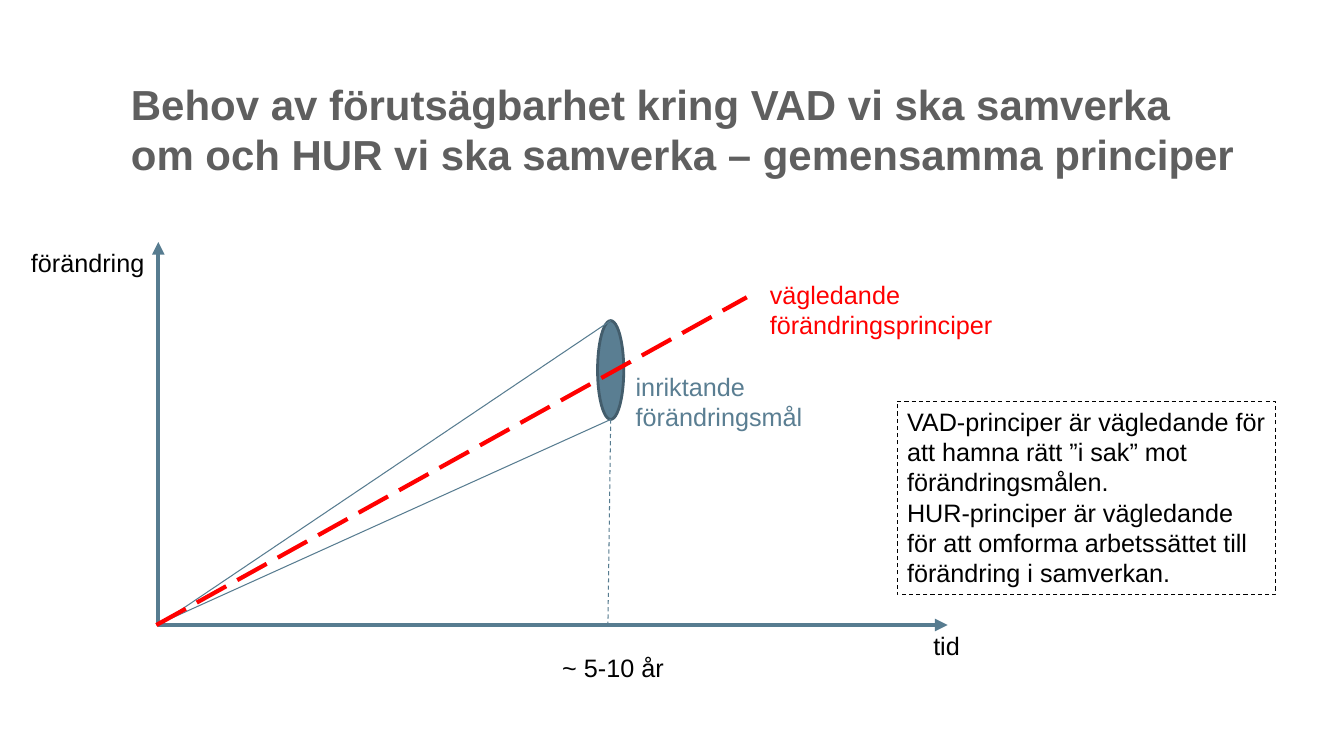
"""Build a slide with a time and change diagram and its guiding principles."""
from lxml.etree import SubElement
from pptx import Presentation
from pptx.dml.color import RGBColor
from pptx.enum.dml import MSO_LINE as DASH
from pptx.enum.shapes import MSO_CONNECTOR, MSO_SHAPE
from pptx.enum.text import MSO_AUTO_SIZE as FIT
from pptx.oxml.ns import qn
from pptx.util import Cm, Pt


def rgb(value):
    return RGBColor.from_string(value)


def add_text(box, paragraphs, color="000000", size=18, bold=False, wrap=True):
    sp = s.shapes.add_textbox(*map(Cm, box))
    tf = sp.text_frame
    tf.word_wrap = wrap
    tf.auto_size = FIT.NONE if bold else FIT.SHAPE_TO_FIT_TEXT
    tf.text = "\n".join(paragraphs)
    for p in tf.paragraphs:
        p.font.name = "Arial"
        p.font.size = Pt(size)
        p.font.bold = bold
        p.font.color.rgb = rgb(color)
    return sp


prs = Presentation()
prs.slide_width, prs.slide_height = Cm(33.87), Cm(19.05)
s = prs.slides.add_slide(prs.slide_layouts[6])

BLUE, GOAL, RED = "577C90", "5A7E92", "FF0000"
origin = (3.99, 15.75)
start = (3.94, 15.75)
goal_x, goal_top, goal_bottom = 15.39, 8.08, 10.57

title = add_text(
    (3.05, 1.73, 28.35, 3.4),
    ["Behov av förutsägbarhet kring VAD vi ska samverka om och HUR vi ska samverka – gemensamma principer"],
    "5F5F5F", 30, bold=True)
title.text_frame.margin_top = Cm(0.25)
title.text_frame.margin_right = Cm(0.2)

goal = s.shapes.add_shape(MSO_SHAPE.OVAL, Cm(goal_x - 0.33), Cm(goal_top),
                          Cm(0.66), Cm(goal_bottom - goal_top))
goal.shadow.inherit = False
goal.fill.solid()
goal.fill.fore_color.rgb = rgb(GOAL)
goal.line.color.rgb = rgb("435D6C")
goal.line.width = Pt(2)

lines = [
    (origin, (23.88, 15.75), BLUE, 3, None, True),
    (origin, (3.99, 6.1), BLUE, 3, None, True),
    ((goal_x, goal_bottom), (15.32, 15.75), BLUE, 0.75, DASH.DASH, False),
    (origin, (goal_x, goal_top), BLUE, 0.75, None, False),
    (start, (goal_x, goal_bottom), BLUE, 0.75, None, False),
    (start, (18.82, 7.49), RED, 3, DASH.LONG_DASH, False),
]
for begin, end, color, width, dash, arrow in lines:
    c = s.shapes.add_connector(MSO_CONNECTOR.STRAIGHT, *map(Cm, begin + end))
    c.line.color.rgb = rgb(color)
    c.line.width = Pt(width)
    if dash:
        c.line.dash_style = dash
    if arrow:
        SubElement(c.line._get_or_add_ln(), qn("a:tailEnd"), type="triangle")
    SubElement(c._element.spPr, qn("a:effectLst"))

add_text((0.53, 6.1, 3.4, 1.02), ["förändring"], wrap=False)
add_text((23.27, 15.75, 1.19, 1.02), ["tid"], wrap=False)
add_text((13.92, 16.31, 3.1, 1.02), ["~ 5-10 år"], wrap=False)
add_text((19.15, 6.91, 6.4, 1.8), ["vägledande förändringsprinciper"], RED)
add_text((15.77, 9.22, 5.61, 1.8), ["inriktande förändringsmål"], GOAL)

principles = add_text((22.61, 10.11, 9.53, 4.88), [
    "VAD-principer är vägledande för att hamna rätt ”i sak” mot förändringsmålen.",
    "HUR-principer är vägledande för att omforma arbetssättet till förändring i samverkan.",
])
principles.line.color.rgb = rgb("000000")
principles.line.width = Pt(0.75)
principles.line.dash_style = DASH.DASH

prs.save("out.pptx")
